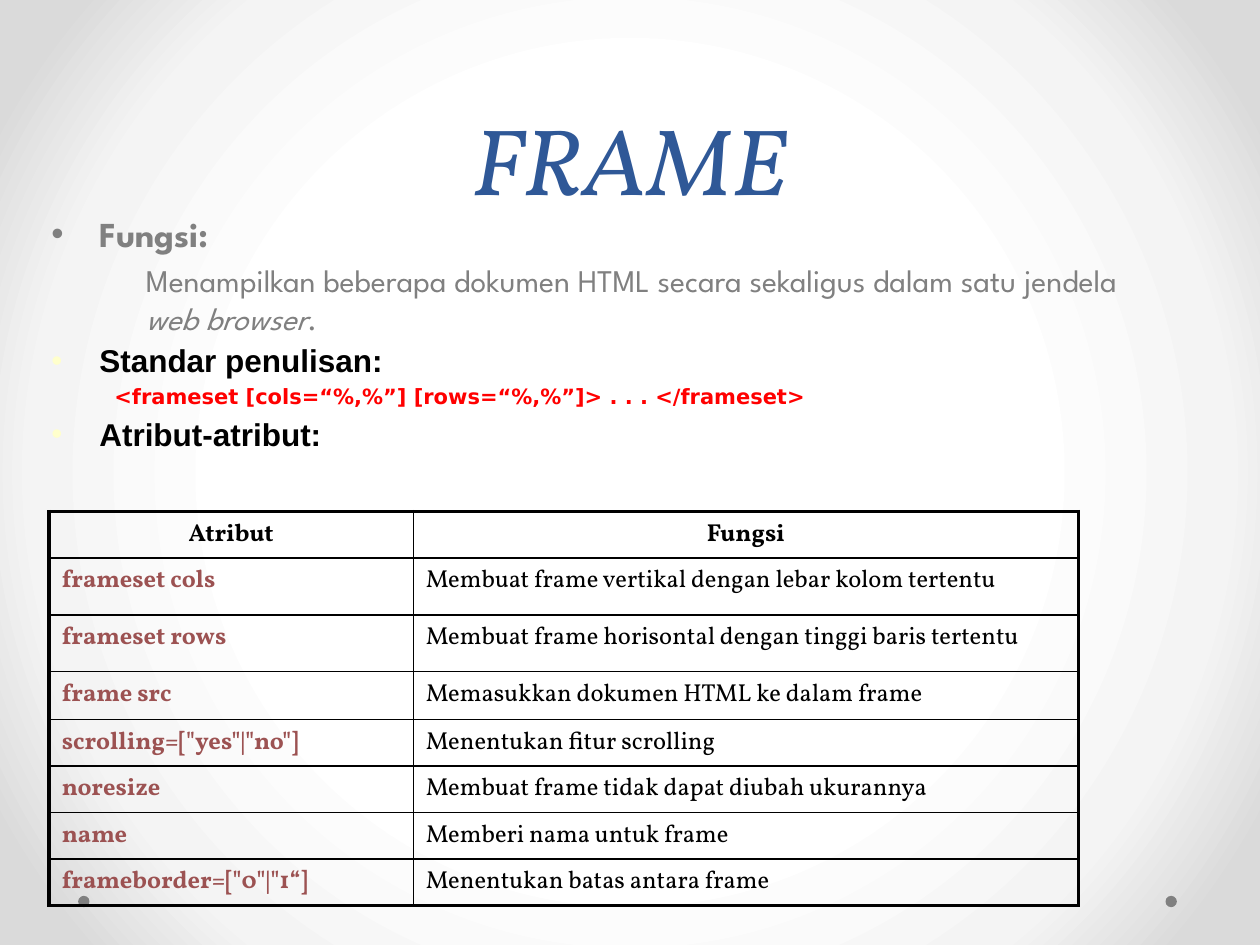
from lxml.etree import SubElement
from pptx import Presentation
from pptx.dml.color import RGBColor
from pptx.enum.shapes import MSO_SHAPE
from pptx.enum.text import MSO_ANCHOR, MSO_AUTO_SIZE, PP_ALIGN
from pptx.oxml import parse_xml
from pptx.oxml.ns import nsdecls, qn
from pptx.util import Inches, Pt

BLUE = RGBColor(0x2F, 0x58, 0x97)
GREY = RGBColor(0x80, 0x80, 0x80)
BLACK = RGBColor(0x00, 0x00, 0x00)
RED = RGBColor(0xFF, 0x00, 0x00)
CREAM = RGBColor(0xFF, 0xFF, 0xCC)
MAROON = RGBColor(0x9C, 0x52, 0x52)
GLOW = [(50, "FFFFFF"), (76, "F4F4F4"), (92, "DADADA")]

SERIF, SANS, HEADING, CODE = "Vollkorn", "League Spartan", "Arial", "DejaVu Sans"
THIN, THICK = 1, 2.25

ATTRIBUTES = [
    ("Atribut", "Fungsi", 3.7),
    ("frameset cols", "Membuat frame vertikal dengan lebar kolom tertentu", 4.5),
    ("frameset rows", "Membuat frame horisontal dengan tinggi baris tertentu", 4.5),
    ("frame src", "Memasukkan dokumen HTML ke dalam frame", 3.8),
    ('scrolling=["yes"|"no"]', "Menentukan fitur scrolling", 3.7),
    ("noresize", "Membuat frame tidak dapat diubah ukurannya", 3.7),
    ("name", "Memberi nama untuk frame", 3.7),
    ('frameborder=["0"|"1“]', "Menentukan batas antara frame", 3.7),
]


def grid(units):
    """Length of grid steps; the slide is 100 columns by 75 rows."""
    return Inches(units / 10)


class FrameSlide:
    def __init__(self, deck):
        self.slide = deck.slides.add_slide(deck.slide_layouts[5])
        self.shapes = self.slide.shapes

    def background(self, stops):
        stop_xml = "".join(
            f'<a:gs pos="{share * 1000}"><a:srgbClr val="{color}"/></a:gs>'
            for share, color in stops)
        self.slide.element.cSld.insert(0, parse_xml(
            f'<p:bg {nsdecls("p", "a")}><p:bgPr><a:gradFill rotWithShape="1">'
            f'<a:gsLst>{stop_xml}</a:gsLst><a:path path="circle">'
            '<a:fillToRect l="50000" t="50000" r="50000" b="50000"/></a:path>'
            '</a:gradFill><a:effectLst/></p:bgPr></p:bg>'))

    def dot(self, column, row):
        dot = self.shapes.add_shape(
            MSO_SHAPE.OVAL, grid(column), grid(row), grid(0.9), grid(0.9))
        dot.shadow.inherit = False
        dot.fill.solid()
        dot.fill.fore_color.rgb = GREY
        dot.line.fill.background()

    def run(self, paragraph, text, font, size, color, bold=False, italic=False):
        run = paragraph.add_run()
        run.text = text
        run.font.name, run.font.size = font, Pt(size)
        run.font.bold, run.font.italic = bold, italic
        run.font.color.rgb = color

    def space_before(self, paragraph):
        spacing = paragraph._p.get_or_add_pPr().get_or_add_spcBef()
        spacing.get_or_add_spcPct().set("val", "20000")

    def title(self, text):
        title = self.shapes.title
        title.left, title.top = grid(5), grid(0)
        title.width, title.height = grid(90), grid(17.5)
        frame = title.text_frame
        frame.auto_size = MSO_AUTO_SIZE.NONE
        frame.vertical_anchor = MSO_ANCHOR.BOTTOM
        paragraph = frame.paragraphs[0]
        paragraph.alignment = PP_ALIGN.CENTER
        paragraph.line_spacing = Pt(58)
        self.run(paragraph, text, SERIF, 54, BLUE, italic=True)

    def text_area(self, column, row, width, height):
        area = self.shapes.add_textbox(
            grid(column), grid(row), grid(width), grid(height))
        area.text_frame.word_wrap = True
        return area.text_frame

    def paragraph(self, frame, margin, bullet=None):
        """Next paragraph, with a hanging bullet if a bullet colour is given."""
        first = frame.paragraphs[0]
        paragraph = frame.add_paragraph() if first.runs else first
        self.space_before(paragraph)
        properties = paragraph._p.get_or_add_pPr()
        properties.set("marL", str(grid(margin)))
        properties.set("indent", str(-grid(margin) if bullet else 0))
        if bullet:
            color = SubElement(properties, qn("a:buClr"))
            SubElement(color, qn("a:srgbClr"), val=str(bullet))
            SubElement(properties, qn("a:buFont"), typeface="Arial")
            SubElement(properties, qn("a:buChar"), char="•")
        return paragraph

    def borders(self, cell, widths):
        properties = cell._tc.get_or_add_tcPr()
        for index, (side, width) in enumerate(zip("LRTB", widths)):
            properties.insert(index, parse_xml(
                f'<a:ln{side} {nsdecls("a")} w="{Pt(width)}"><a:solidFill>'
                f'<a:srgbClr val="{BLACK}"/></a:solidFill></a:ln{side}>'))

    def table(self, column, row, widths, records):
        last = len(records) - 1
        table = self.shapes.add_table(
            len(records), len(widths), grid(column), grid(row),
            grid(sum(widths)), grid(sum(record[-1] for record in records))).table
        table.first_row = table.horz_banding = False
        for table_column, width in zip(table.columns, widths):
            table_column.width = grid(width)
        for r, (*texts, height) in enumerate(records):
            table.rows[r].height = grid(height)
            for c, text in enumerate(texts):
                cell = table.cell(r, c)
                cell.fill.background()
                paragraph = cell.text_frame.paragraphs[0]
                self.space_before(paragraph)
                header, name = r == 0, c == 0
                paragraph.alignment = PP_ALIGN.CENTER if header else PP_ALIGN.LEFT
                self.run(paragraph, text, SERIF, 14,
                         MAROON if name and not header else BLACK,
                         bold=header or name)
                outer = (name, c == len(widths) - 1, header, r == last)
                self.borders(cell, [THICK if edge else THIN for edge in outer])


def main():
    deck = Presentation()
    deck.slide_width, deck.slide_height = grid(100), grid(75)
    page = FrameSlide(deck)

    # Backdrop
    page.background(GLOW)
    for column in (92.5, 6.2):
        page.dot(column, 71.1)

    page.title("FRAME")

    # Purpose of frames
    purpose = page.text_area(3.1, 16.4, 86.7, 11.7)
    page.run(page.paragraph(purpose, 3.8, GREY), "Fungsi:", SANS, 20, GREY, bold=True)
    explanation = page.paragraph(purpose, 7.5)
    page.run(explanation, "Menampilkan beberapa dokumen HTML secara sekaligus "
             "dalam satu jendela ", SANS, 18, GREY)
    page.run(explanation, "web browser", SANS, 18, GREY, italic=True)
    page.run(explanation, ".", SANS, 18, GREY)

    # Syntax
    syntax = page.text_area(3.1, 26.6, 84.2, 13.3)
    page.run(page.paragraph(syntax, 3.8, CREAM), "Standar penulisan:",
             HEADING, 18, BLACK, bold=True)
    page.run(page.paragraph(syntax, 5),
             "<frameset [cols=“%,%”] [rows=“%,%”]> . . . </frameset>",
             CODE, 12, RED, bold=True)
    page.run(page.paragraph(syntax, 3.8, CREAM), "Atribut-atribut:",
             HEADING, 18, BLACK, bold=True)

    # Attributes
    page.table(3.9, 40.6, (28.9, 52.8), ATTRIBUTES)

    deck.save("out.pptx")


if __name__ == "__main__":
    main()
